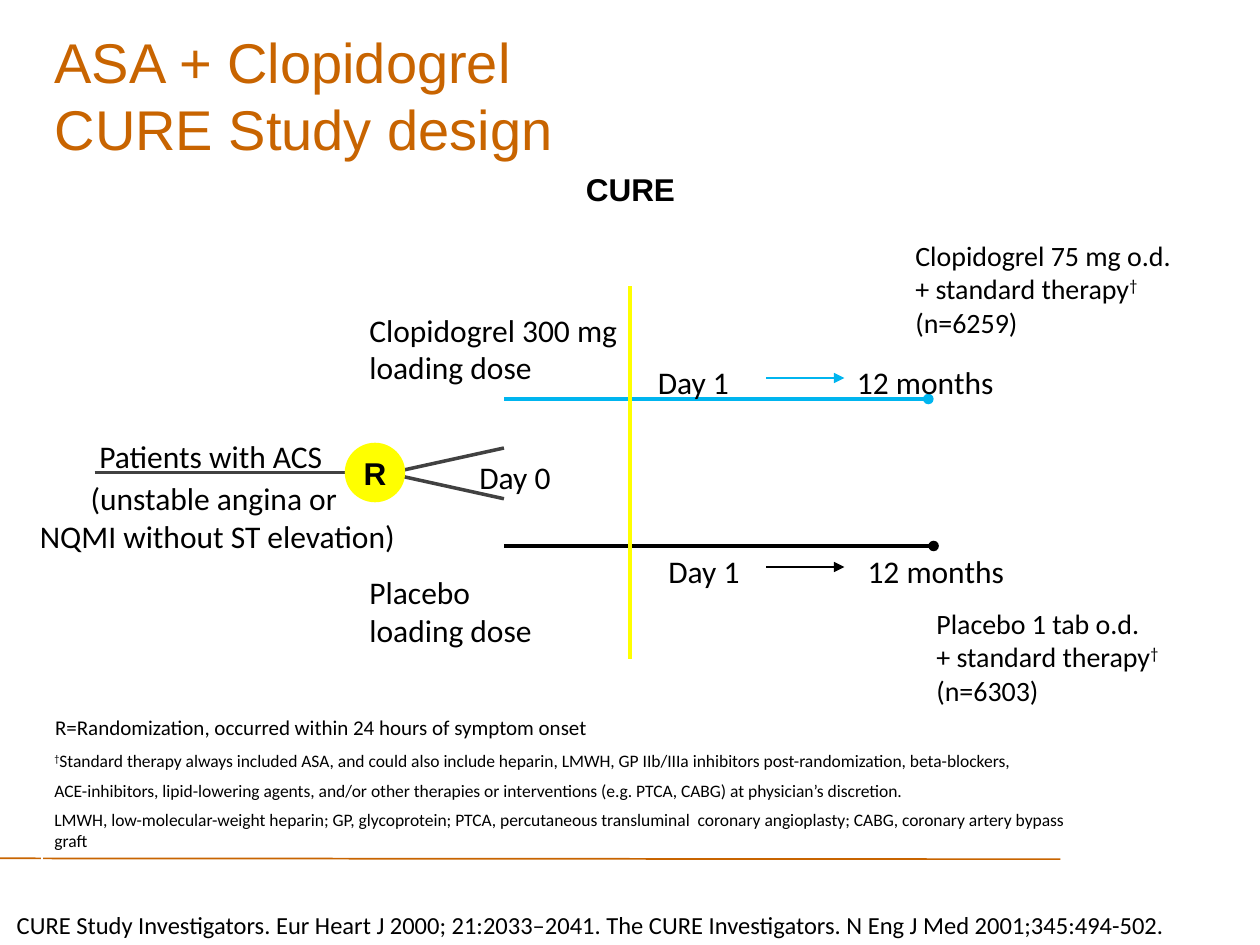
from pptx import Presentation
from pptx.dml.color import RGBColor
from pptx.enum.shapes import MSO_CONNECTOR, MSO_SHAPE
from pptx.enum.text import MSO_ANCHOR, MSO_AUTO_SIZE, PP_ALIGN
from pptx.oxml.ns import qn
from pptx.util import Pt
from lxml.etree import SubElement

ORANGE, BLUE, YELLOW = "C86400", "00B5EF", "FFFF00"
GREY, BLACK, WHITE = "414141", "000000", "FFFFFF"


def rgb(code):
    """Turn a hex string into a colour."""
    return RGBColor.from_string(code)


class StudySlide:
    """Hold the style and the current slide, and draw each kind of element in points."""

    body_font = "Calibri"
    head_font = "Arial"

    def __init__(self, slide):
        """Keep the slide to draw on."""
        self.slide = slide

    def style(self, paragraph, size, font, color=BLACK, bold=False, align=PP_ALIGN.LEFT):
        """Set the font and alignment of a paragraph."""
        paragraph.alignment = align
        paragraph.font.size = Pt(size)
        paragraph.font.name = font
        paragraph.font.bold = bold
        paragraph.font.color.rgb = rgb(color)

    def outline(self, line, color, width):
        """Set the colour and width of a line."""
        line.color.rgb = rgb(color)
        line.width = Pt(width)

    def title(self, text, left, top, width, height):
        """Place and format the title placeholder."""
        heading = self.slide.shapes.title
        heading.left, heading.top = Pt(left), Pt(top)
        heading.width, heading.height = Pt(width), Pt(height)
        frame = heading.text_frame
        frame.text = text
        frame.auto_size = MSO_AUTO_SIZE.NONE
        frame.vertical_anchor = MSO_ANCHOR.MIDDLE
        self.style(frame.paragraphs[0], 32, self.head_font, ORANGE)

    def text(self, lines, left, top, width, height, size=18, font=body_font,
             bold=False, align=PP_ALIGN.LEFT, wrap=False, gap=0, spacing=None):
        """Add a text box with one paragraph per line and raised daggers."""
        frame = self.slide.shapes.add_textbox(
            Pt(left), Pt(top), Pt(width), Pt(height)).text_frame
        frame.word_wrap = wrap
        for index, line in enumerate(lines):
            paragraph = frame.add_paragraph() if index else frame.paragraphs[0]
            for part in filter(None, line.partition("†")):
                if part == "†":
                    dagger = paragraph.add_run()
                    dagger.text = part
                    dagger._r.get_or_add_rPr().set("baseline", "30000")
                else:
                    for row, piece in enumerate(part.split("\v")):
                        if row:
                            paragraph.add_line_break()
                        paragraph.add_run().text = piece
            self.style(paragraph, size, font, bold=bold, align=align)
            if index and gap:
                paragraph.space_before = Pt(gap)
            if spacing:
                paragraph.line_spacing = spacing

    def label(self, line, left, top, width, height=28.8, **options):
        """Add a centred label."""
        self.text([line], left, top, width, height, align=PP_ALIGN.CENTER, **options)

    def line(self, x1, y1, x2, y2, color, width=2, end=None):
        """Add a straight line with an optional end mark."""
        connector = self.slide.shapes.add_connector(
            MSO_CONNECTOR.STRAIGHT, Pt(x1), Pt(y1), Pt(x2), Pt(y2))
        self.outline(connector.line, color, width)
        if end:
            SubElement(connector.line._get_or_add_ln(), qn("a:tailEnd"), type=end)
        SubElement(connector._element.spPr, qn("a:effectLst"))

    def shape(self, kind, left, top, width, height, color, line_width, fill=None):
        """Add a preset shape."""
        preset = self.slide.shapes.add_shape(kind, Pt(left), Pt(top), Pt(width), Pt(height))
        preset.shadow.inherit = False
        if fill:
            preset.fill.solid()
            preset.fill.fore_color.rgb = rgb(fill)
        else:
            preset.fill.background()
        self.outline(preset.line, color, line_width)
        return preset

    def node(self, letter, left, top, width, height):
        """Add the round randomization mark."""
        circle = self.shape(MSO_SHAPE.OVAL, left, top, width, height, YELLOW, 2, YELLOW)
        frame = circle.text_frame
        frame.word_wrap = False
        frame.vertical_anchor = MSO_ANCHOR.MIDDLE
        frame.margin_top = frame.margin_bottom = Pt(3)
        frame.margin_left = frame.margin_right = Pt(6.5)
        frame.text = letter
        self.style(frame.paragraphs[0], 18, self.head_font, bold=True, align=PP_ALIGN.CENTER)

    def fork(self, start, *points):
        """Add an open outline through the points."""
        builder = self.slide.shapes.build_freeform(Pt(start[0]), Pt(start[1]))
        builder.add_line_segments([(Pt(x), Pt(y)) for x, y in points], close=False)
        branches = builder.convert_to_shape()
        branches.shadow.inherit = False
        branches.fill.background()
        self.outline(branches.line, GREY, 2)


def main():
    """Build the study design slide."""
    deck = Presentation()
    deck.slide_width, deck.slide_height = Pt(720), Pt(540)
    study = StudySlide(deck.slides.add_slide(deck.slide_layouts[5]))

    study.title("ASA + Clopidogrel\vCURE Study design", 24, 24, 642, 60)
    study.line(606, 491, 0, 490.5, ORANGE, 1)
    study.text([
        "†Standard therapy always included ASA, and could also include heparin, LMWH, "
        "GP IIb/IIIa inhibitors post-randomization, beta-blockers,",
        "ACE-inhibitors, lipid-lowering agents, and/or other therapies or interventions "
        "(e.g. PTCA, CABG) at physician’s discretion.",
        "LMWH, low-molecular-weight heparin; GP, glycoprotein; PTCA, percutaneous "
        "transluminal  coronary angioplasty; CABG, coronary artery bypass graft",
    ], 24, 425, 594, 67, size=10, wrap=True, gap=5)
    study.shape(MSO_SHAPE.RECTANGLE, 24, 426, 594, 66, WHITE, 1)
    study.label("R=Randomization, occurred within 24 hours of symptom onset",
                22.5, 404.5, 322, 21.6, size=12)
    study.text(["CURE Study Investigators. Eur Heart J 2000; 21:2033–2041. "
                "The CURE Investigators. N Eng J Med 2001;345:494-502."],
               2.5, 515, 698.5, 26, size=14, wrap=True, spacing=1.1)

    study.line(54, 270, 204, 270, GREY)
    study.fork((288, 256), (222, 270.5), (288, 285))
    study.label("CURE", 327.5, 93.6, 65.5, font=study.head_font, bold=True)

    arms = [
        (BLUE, 228, 530.5, 216, 204, 368.5, "Clopidogrel 300 mg", 174, 158,
         "Clopidogrel 75 mg o.d.", "(n=6259)", 516, 132.5, 162),
        (BLACK, 312, 533.5, 324, 312, 374.5, "Placebo", 324, 109,
         "Placebo 1 tab o.d.", "(n=6303)", 528, 343, 143),
    ]
    for (color, track, track_end, arrow, day_top, day_left, loading, loading_top,
         loading_width, dose, patients, dose_left, dose_top, dose_width) in arms:
        study.line(288, track, track_end, track, color, end="oval")
        study.line(438, arrow, 482.5, arrow, color, 1, "triangle")
        study.label("Day 1", day_left, day_top, 55.5)
        study.label("12 months", day_left + 113.5, day_top, 93.5)
        study.text([loading, "loading dose"], 204, loading_top, loading_width, 51)
        study.text([dose, "+ standard therapy†", patients],
                   dose_left, dose_top, dose_width, 65.5, size=16)

    study.line(360, 163.5, 360, 376.5, YELLOW)
    study.node("R", 198, 254, 32.5, 32)
    study.label("Patients with ACS", 49, 246, 143)
    study.label("(unstable angina or \vNQMI without ST elevation)", 14.5, 270, 219.5, 51)
    study.label("Day 0", 266.5, 258, 55.5)

    deck.save("out.pptx")


if __name__ == "__main__":
    main()
